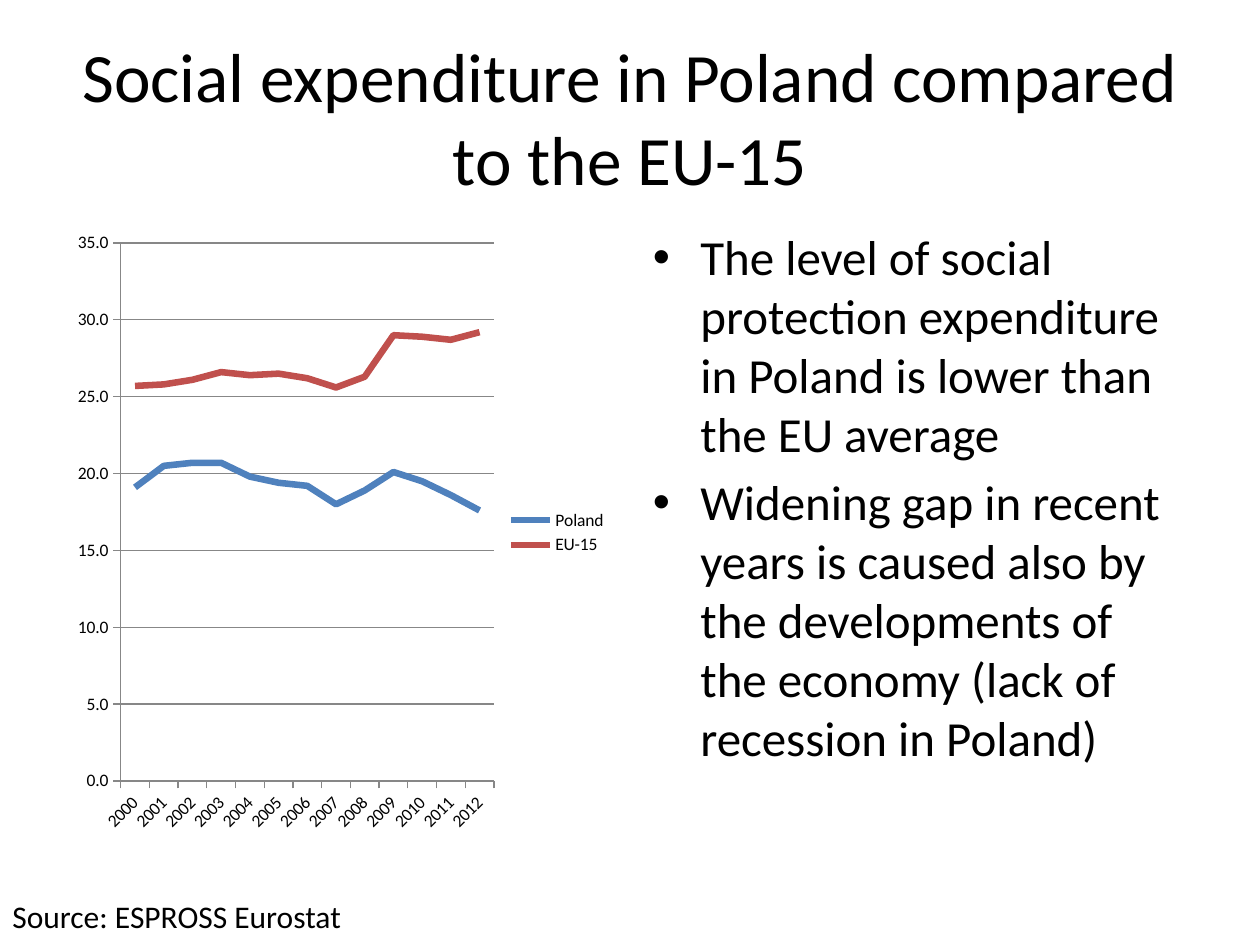
import pptx
import pptx.chart.data
import pptx.dml.color
import pptx.enum.chart
import pptx.enum.text
import pptx.oxml
import pptx.util
from pptx.util import Cm, Pt


def colour(hex_text):
    return pptx.dml.color.RGBColor.from_string(hex_text)


def format_font(font, size):
    for name, value in {"name": "Calibri", "size": Pt(size)}.items():
        setattr(font, name, value)
    font.color.rgb = colour("000000")


deck = pptx.Presentation()
deck.slide_width, deck.slide_height = Cm(25.4), Cm(19.05)
page = deck.slides.add_slide(deck.slide_layouts[5])

# Title
title = page.shapes.title
place = {"left": Cm(1.27), "top": Cm(0.76), "width": Cm(22.86), "height": Cm(3.18)}
for name, value in place.items():
    setattr(title, name, value)
title.text_frame.vertical_anchor = pptx.enum.text.MSO_ANCHOR.MIDDLE
para = title.text_frame.paragraphs[0]
para.alignment = pptx.enum.text.PP_ALIGN.CENTER
span = para.add_run()
span.text = "Social expenditure in Poland compared to the EU-15"
format_font(span.font, 39.6)

# Line chart, in percent with one decimal
number_format = r"#\ ##0.0"
spending = {
    "Poland": ("4F81BD", [19.1, 20.5, 20.7, 20.7, 19.8, 19.4, 19.2,
                          18, 18.9, 20.1, 19.5, 18.6, 17.6]),
    "EU-15": ("C0504D", [25.7, 25.8, 26.1, 26.6, 26.4, 26.5, 26.2,
                         25.6, 26.3, 29, 28.9, 28.7, 29.2]),
}
data = pptx.chart.data.CategoryChartData(number_format=number_format)
data.categories = [str(year) for year in range(2000, 2013)]
for name, (line_colour, values) in spending.items():
    data.add_series(name, values)
chart = page.shapes.add_chart(
    pptx.enum.chart.XL_CHART_TYPE.LINE,
    Cm(1.27), Cm(4.45), Cm(11.22), Cm(12.57), data).chart
format_font(chart.font, 10)
chart.has_title = False
chart.has_legend = True
chart.legend.position = pptx.enum.chart.XL_LEGEND_POSITION.RIGHT
chart.legend.include_in_layout = False
chart.plots[0].vary_by_categories = False
for series in chart.plots[0].series:
    series.smooth = False
    series.format.line.width = Pt(3.75)
    series.format.line.color.rgb = colour(spending[series.name][0])

value_axis = chart.value_axis
value_axis.has_major_gridlines = True
value_axis.tick_labels.number_format = number_format
value_axis.tick_labels.number_format_is_linked = False
for axis in (chart.category_axis, value_axis):
    axis.major_tick_mark = pptx.enum.chart.XL_TICK_MARK.OUTSIDE
for part in (chart.category_axis, value_axis, value_axis.major_gridlines):
    part.format.line.width = Pt(0.7)
    part.format.line.color.rgb = colour("878787")

# Bulleted findings
findings = [
    "The level of social protection expenditure in Poland is lower than the EU average",
    "Widening gap in recent years is caused also by the developments of "
    "the economy (lack of recession in Poland)",
]
box = page.shapes.add_textbox(Cm(12.91), Cm(4.45), Cm(11.22), Cm(12.57))
box.text_frame.word_wrap = True
for index, finding in enumerate(findings):
    para = box.text_frame.paragraphs[0] if index == 0 else box.text_frame.add_paragraph()
    para.space_before = Pt(5.4)
    span = para.add_run()
    span.text = finding
    format_font(span.font, 28)
    properties = para._p.get_or_add_pPr()
    properties.set("marL", str(Cm(0.96)))
    properties.set("indent", str(-Cm(0.96)))
    for tag, attribute, value in (("buFont", "typeface", "Arial"), ("buChar", "char", "•")):
        bullet = pptx.oxml.parse_xml(
            f'<a:{tag} xmlns:a="http://schemas.openxmlformats.org/drawingml/2006/main" '
            f'{attribute}="{value}"/>')
        properties.append(bullet)

# Source line
box = page.shapes.add_textbox(Cm(0), Cm(17.96), Cm(7.26), Cm(1.02))
box.text_frame.word_wrap = False
box.text_frame.auto_size = pptx.enum.text.MSO_AUTO_SIZE.SHAPE_TO_FIT_TEXT
span = box.text_frame.paragraphs[0].add_run()
span.text = "Source: ESPROSS Eurostat"
format_font(span.font, 18)

deck.save("out.pptx")
